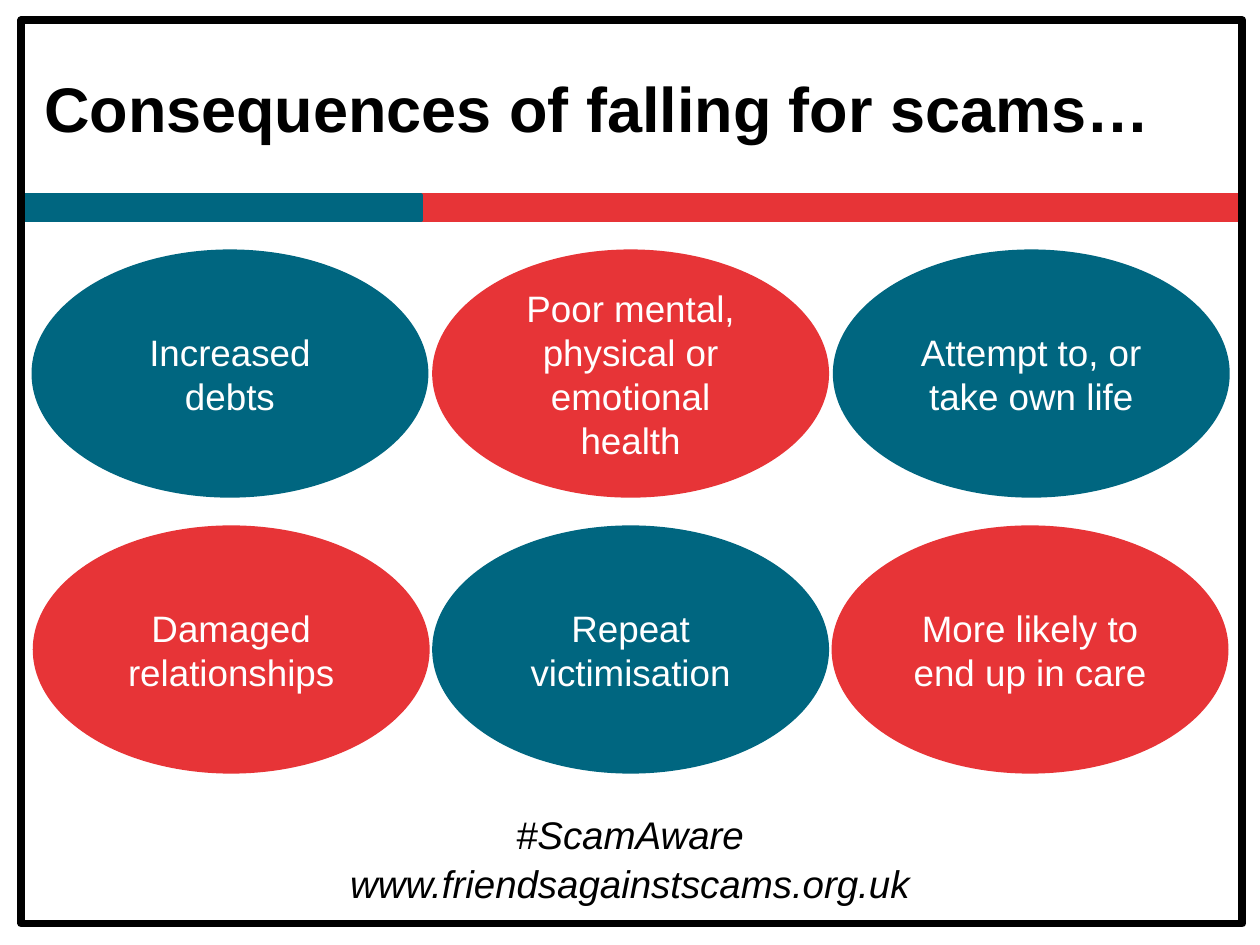
"""Build the slide on the consequences of falling for scams."""
import pptx
import pptx.dml.color
import pptx.enum.shapes
import pptx.enum.text
import pptx.util
from pptx.util import Inches

COLOURS = {"teal": "006680", "red": "E73437", "black": "000000", "white": "FFFFFF"}
SHAPES = pptx.enum.shapes.MSO_SHAPE
ALIGN = pptx.enum.text.PP_ALIGN
ANCHOR = pptx.enum.text.MSO_ANCHOR
AUTO_SIZE = pptx.enum.text.MSO_AUTO_SIZE

TITLE_FONT = {"name": "Arial", "size": pptx.util.Pt(36), "bold": True}
OVAL_FONT = {"name": "Arial", "size": pptx.util.Pt(21)}
FOOTER_FONT = {"name": "Arial", "size": pptx.util.Pt(22), "italic": True}

OVAL_WIDTH, OVAL_HEIGHT = 3.15, 1.97
OVAL_ROWS = [
    (0.25, 1.98, 3.18, [
        ("Increased debts", "teal"),
        ("Poor mental, physical or emotional health", "red"),
        ("Attempt to, or take own life", "teal"),
    ]),
    (0.26, 4.17, 3.17, [
        ("Damaged relationships", "red"),
        ("Repeat victimisation", "teal"),
        ("More likely to end up in care", "red"),
    ]),
]


def colour(name):
    """Return the named colour as an RGB value."""
    return pptx.dml.color.RGBColor.from_string(COLOURS[name])


def write_text(shape, text, font, colour_name, alignment, anchor):
    """Put one formatted paragraph into a shape."""
    frame = shape.text_frame
    frame_format = {"word_wrap": True, "auto_size": AUTO_SIZE.NONE,
                    "vertical_anchor": anchor}
    for name, value in frame_format.items():
        setattr(frame, name, value)
    paragraph = frame.paragraphs[0]
    paragraph.alignment = alignment
    run = paragraph.add_run()
    run.text = text
    for name, value in font.items():
        setattr(run.font, name, value)
    run.font.color.rgb = colour(colour_name)


def add_shape(slide, kind, box, fill=None, line=None, line_width=0):
    """Add a flat preset shape with optional fill and outline."""
    shape = slide.shapes.add_shape(kind, *map(Inches, box))
    shape.shadow.inherit = False
    if fill:
        shape.fill.solid()
        shape.fill.fore_color.rgb = colour(fill)
    else:
        shape.fill.background()
    if line:
        shape.line.color.rgb = colour(line)
        shape.line.width = pptx.util.Pt(line_width)
    else:
        shape.line.fill.background()
    return shape


def add_title(slide, text):
    """Place and format the title placeholder."""
    title = slide.shapes.title
    box = {"left": 0.25, "top": 0.5, "width": 9.42, "height": 1.25}
    for name, value in box.items():
        setattr(title, name, Inches(value))
    write_text(title, text, TITLE_FONT, "black", ALIGN.LEFT, ANCHOR.TOP)


def add_frame(slide):
    """Draw the two-colour band and the slide border."""
    for left, width, name in [(0.42, 9.44, "red"), (0.17, 3.17, "teal")]:
        add_shape(slide, SHAPES.RECTANGLE, (left, 1.55, width, 0.2), name, name, 2)
    add_shape(slide, SHAPES.RECTANGLE, (0.17, 0.16, 9.69, 7.17),
              line="black", line_width=4.5)


def add_footer_line(slide, text, top):
    """Add a centred footer line across the slide."""
    box = slide.shapes.add_textbox(*map(Inches, (0, top, 10, 0.47)))
    write_text(box, text, FOOTER_FONT, "black", ALIGN.CENTER, ANCHOR.TOP)


def add_ovals(slide):
    """Add the rows of consequence ovals."""
    for left, top, step, consequences in OVAL_ROWS:
        for column, (text, fill) in enumerate(consequences):
            box = (left + column * step, top, OVAL_WIDTH, OVAL_HEIGHT)
            oval = add_shape(slide, SHAPES.OVAL, box, fill)
            write_text(oval, text, OVAL_FONT, "white", ALIGN.CENTER, ANCHOR.MIDDLE)


def main():
    """Build and save the presentation."""
    presentation = pptx.Presentation()
    presentation.slide_width = Inches(10)
    presentation.slide_height = Inches(7.5)
    slide = presentation.slides.add_slide(presentation.slide_layouts[5])
    add_title(slide, "Consequences of falling for scams…")
    add_frame(slide)
    add_footer_line(slide, "#ScamAware", 6.39)
    add_footer_line(slide, "www.friendsagainstscams.org.uk", 6.78)
    add_ovals(slide)
    presentation.save("out.pptx")


if __name__ == "__main__":
    main()
